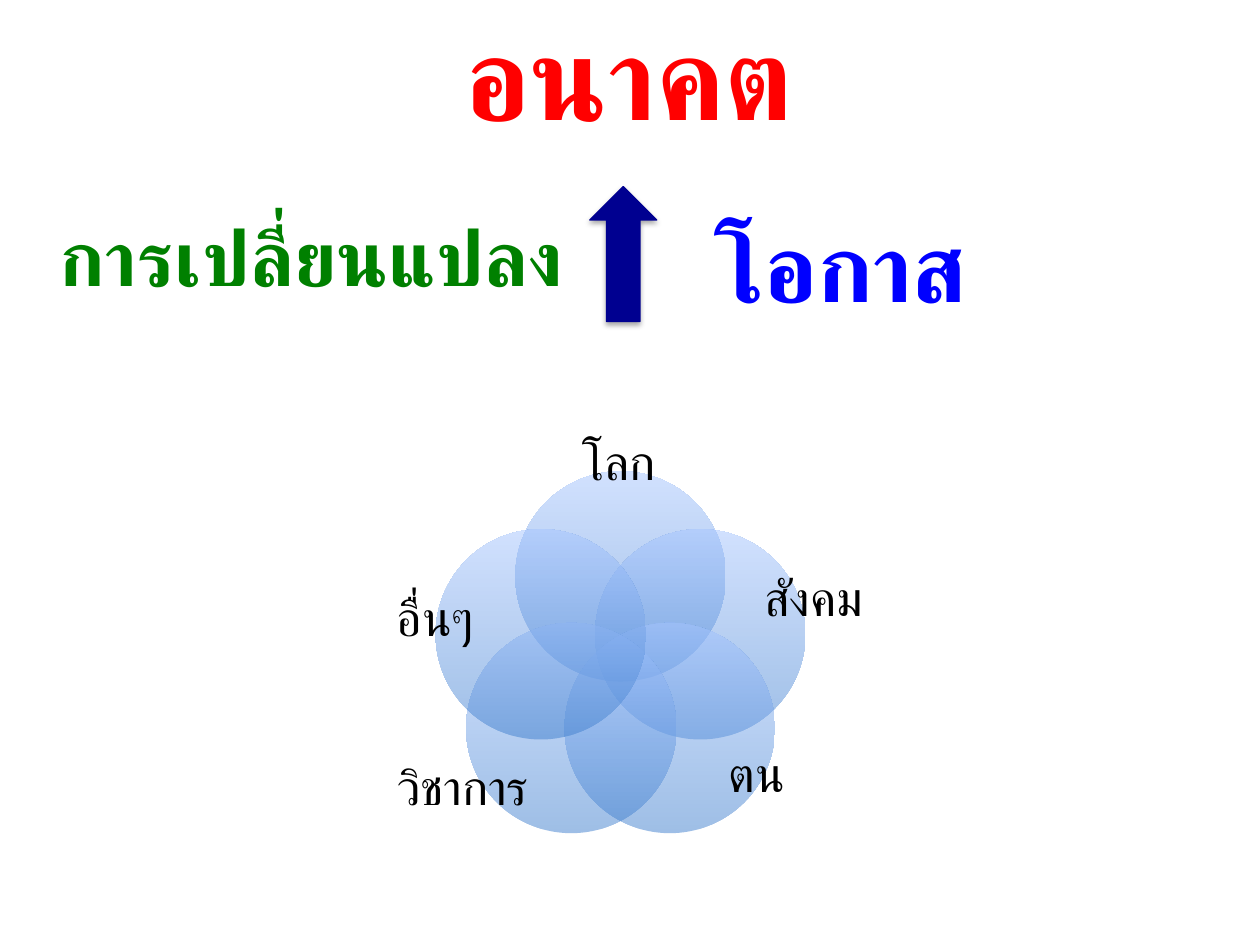
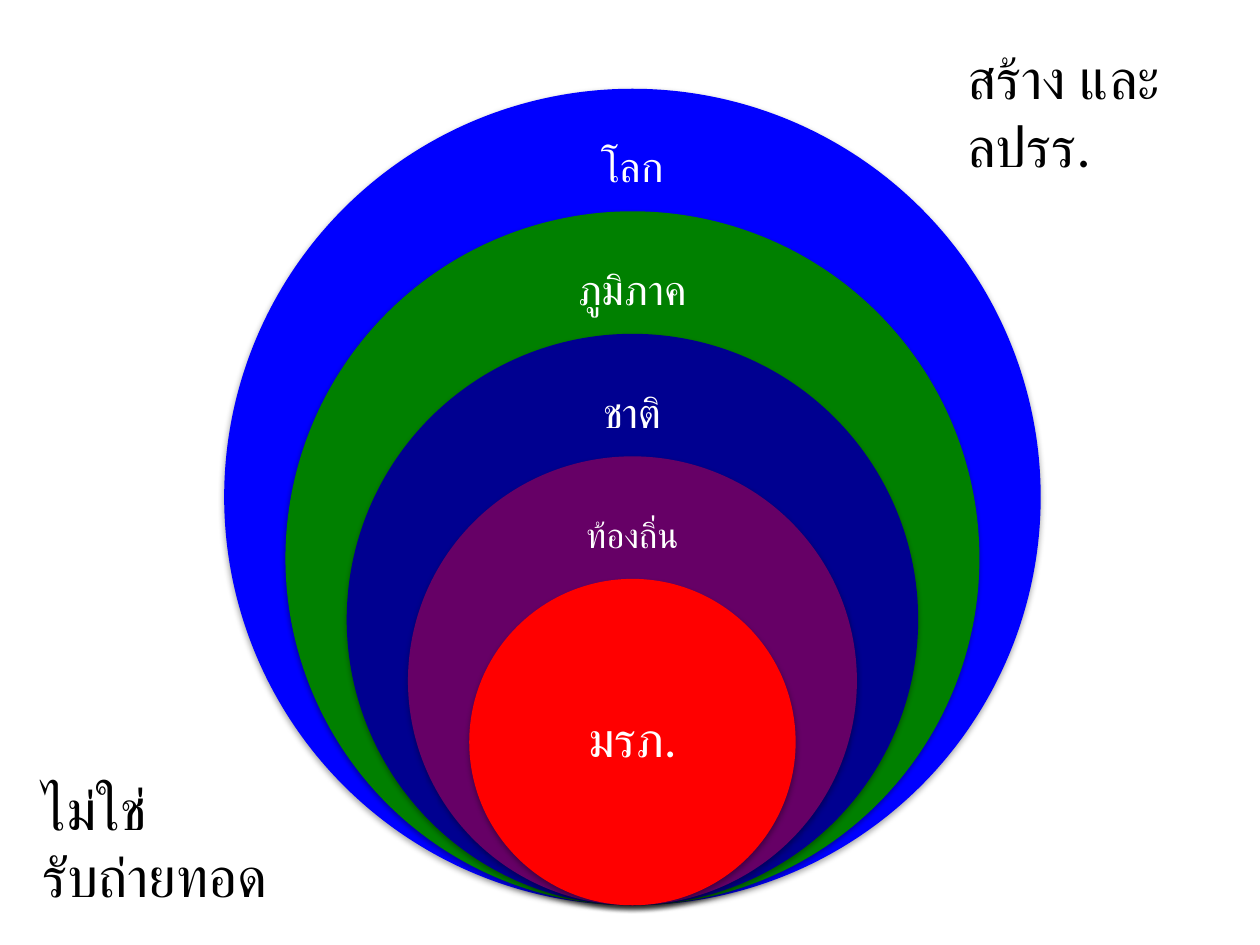
from math import cos, radians, sin

from lxml.etree import SubElement
from pptx import Presentation
from pptx.dml.color import RGBColor
from pptx.enum.shapes import MSO_SHAPE
from pptx.enum.text import MSO_ANCHOR, MSO_AUTO_SIZE, PP_ALIGN
from pptx.oxml.ns import qn
from pptx.util import Cm, Pt

FONT = "Calibri"
BLACK, WHITE, RED = "000000", "FFFFFF", "FF0000"
GREEN, BLUE, NAVY, PURPLE = "008000", "0000FF", "000090", "660066"
OUTLINE = "054697"
PETAL_STOPS = ("3F7FCE", "A4C4FF")


def rgb(value):
    return RGBColor.from_string(value)


def add_xml(parent, tag, **attributes):
    return SubElement(parent, qn(tag), {key: str(value) for key, value in attributes.items()})


class Deck:
    """Holds the shared style and the current slide; all lengths are in centimetres."""

    def __init__(self):
        self.presentation = Presentation()
        self.presentation.slide_width = Cm(25.4)
        self.presentation.slide_height = Cm(19.05)
        self.slide = None

    def new_slide(self):
        self.slide = self.presentation.slides.add_slide(self.presentation.slide_layouts[6])

    def shape(self, kind, left, top, width, height):
        shape = self.slide.shapes.add_shape(kind, Cm(left), Cm(top), Cm(width), Cm(height))
        shape.shadow.inherit = False
        shape.line.fill.background()
        return shape

    def solid(self, kind, left, top, width, height, color):
        """A plain filled shape with the soft shadow below it."""
        shape = self.shape(kind, left, top, width, height)
        shape.fill.solid()
        shape.fill.fore_color.rgb = rgb(color)
        effects = shape._element.spPr.find(qn("a:effectLst"))
        shadow = add_xml(effects, "a:outerShdw", blurRad=40000, dist=23000, dir=5400000, rotWithShape=0)
        add_xml(add_xml(shadow, "a:srgbClr", val=BLACK), "a:alpha", val=35000)
        return shape

    def petal(self, center_x, center_y, diameter):
        """A half transparent circle, darker towards the bottom."""
        shape = self.shape(MSO_SHAPE.OVAL, center_x - diameter / 2, center_y - diameter / 2, diameter, diameter)
        shape.fill.gradient()
        shape.fill.gradient_angle = 90
        for stop, position, color in zip(shape.fill.gradient_stops, (0, 1), PETAL_STOPS):
            stop.position = position
            stop.color.rgb = rgb(color)
        for color_node in shape._element.spPr.iter(qn("a:srgbClr")):
            add_xml(color_node, "a:alpha", val=50000)

    def text(self, lines, left, top, width, height, size, color, align=None, wrap=False, bold=None):
        box = self.slide.shapes.add_textbox(Cm(left), Cm(top), Cm(width), Cm(height))
        text_frame = box.text_frame
        text_frame.text = lines
        text_frame.word_wrap = wrap
        text_frame.auto_size = MSO_AUTO_SIZE.SHAPE_TO_FIT_TEXT
        for paragraph in text_frame.paragraphs:
            paragraph.alignment = align
            for run in paragraph.runs:
                run.font.name = FONT
                run.font.size = Pt(size)
                run.font.bold = bold
                run.font.color.rgb = rgb(color)
        return text_frame

    def headline(self, words, left, top, width, height, size, color, wrap=False):
        """Bold centred words with a thin outline round the letters."""
        text_frame = self.text(words, left, top, width, height, size, color, PP_ALIGN.CENTER, wrap, True)
        properties = text_frame.paragraphs[0].runs[0]._r.get_or_add_rPr()
        line = add_xml(properties, "a:ln", w=12700)
        add_xml(add_xml(line, "a:solidFill"), "a:srgbClr", val=OUTLINE)
        properties.insert(0, line)

    def label(self, words, left, top, width, height, size, color, inset=0):
        """A diagram label, centred both ways in its box."""
        text_frame = self.text(words, left, top, width, height, size, color, PP_ALIGN.CENTER, True)
        text_frame.auto_size = MSO_AUTO_SIZE.NONE
        text_frame.vertical_anchor = MSO_ANCHOR.MIDDLE
        text_frame.margin_left = text_frame.margin_right = Cm(inset)
        text_frame.margin_top = text_frame.margin_bottom = Cm(inset)
        paragraph = text_frame.paragraphs[0]
        paragraph.line_spacing = 0.9
        spacing = add_xml(paragraph._p.get_or_add_pPr(), "a:spcAft")
        add_xml(spacing, "a:spcPct", val=35000)


def build_future(deck):
    deck.new_slide()

    # Flower of five overlapping circles, clockwise from the top
    center_x, center_y, reach, diameter = 12.51, 13.31, 1.69, 4.24
    petals = [
        ("โลก", 10.03, 7.95, 4.9, 2.84),
        ("สังคม", 14.2, 10.57, 4.39, 3.07),
        ("ตน", 13.06, 14.12, 4.39, 3.07),
        ("วิชาการ", 7.14, 14.38, 4.39, 3.07),
        ("อื่นๆ", 6.58, 10.97, 4.39, 3.07),
    ]
    for index, (words, *box) in enumerate(petals):
        angle = radians(index * 360 / len(petals))
        deck.petal(center_x + reach * sin(angle), center_y - reach * cos(angle), diameter)
        deck.label(words, *box, 28, BLACK)

    # Arrow towards the future, with the words around it
    deck.headline("อนาคต", 8.94, -0.03, 7.49, 3.07, 66, RED)
    arrow = deck.solid(MSO_SHAPE.UP_ARROW, 11.89, 3.76, 1.35, 2.72, NAVY)
    arrow.line.color.rgb = rgb(NAVY)
    arrow.line.width = Pt(0.75)
    deck.headline("การเปลี่ยนแปลง", -0.97, 4.09, 14.48, 2.13, 44, GREEN, wrap=True)
    deck.headline("โอกาส", 14.07, 4.06, 5.77, 2.57, 54, BLUE)


def build_levels(deck):
    deck.new_slide()

    # Nested circles that touch at the bottom
    center_x, bottom, largest, step = 12.75, 18.25, 16.46, 2.47
    label_offset, label_height = 0.81, 1.63
    levels = [
        ("โลก", BLUE, 6.17, 24, 0.48),
        ("ภูมิภาค", GREEN, 6.05, 24, 0.48),
        ("ชาติ", NAVY, 5.97, 24, 0.48),
        ("ท้องถิ่น", PURPLE, 4.9, 20, 0.41),
        ("มรภ.", RED, 4.65, 28, 0.56),
    ]
    for index, (words, color, width, size, inset) in enumerate(levels):
        diameter = largest - index * step
        top = bottom - diameter
        deck.solid(MSO_SHAPE.OVAL, center_x - diameter / 2, top, diameter, diameter, color)
        if index == len(levels) - 1:
            label_height = 3.3
            label_offset = (diameter - label_height) / 2
        deck.label(words, center_x - width / 2, top + label_offset, width, label_height, size, WHITE, inset)

    # Remarks in the corners
    deck.text("สร้าง และ\nลปรร.", 19.25, 0.76, 4.9, 3, 32, BLACK)
    deck.text("ไม่ใช่\nรับถ่ายทอด", 0.61, 15.49, 5.92, 3, 32, BLACK)


def main():
    deck = Deck()
    build_future(deck)
    build_levels(deck)
    deck.presentation.save("out.pptx")


if __name__ == "__main__":
    main()
